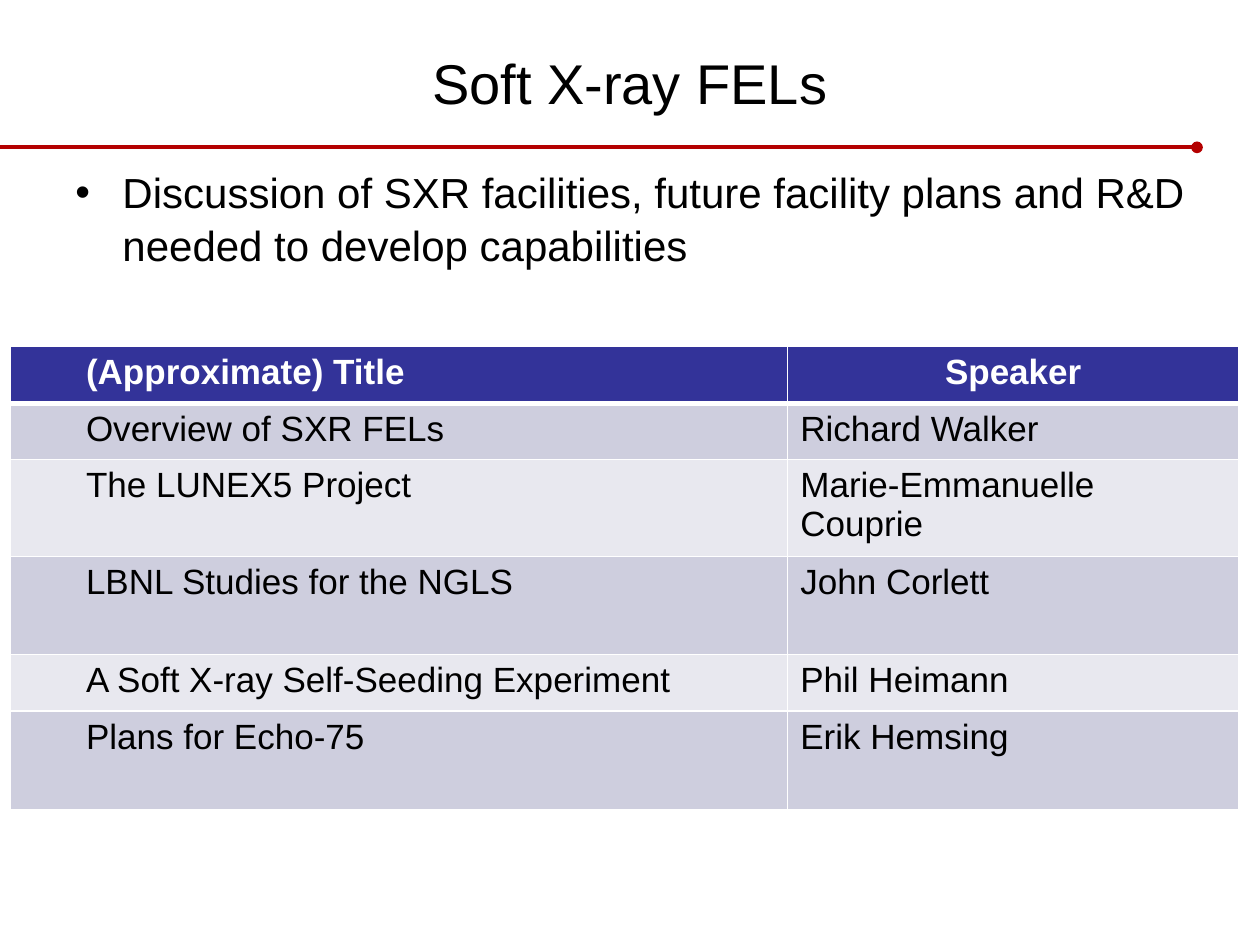
from dataclasses import dataclass

from lxml import etree
from pptx import Presentation
from pptx import util as u
from pptx.dml.color import RGBColor
from pptx.enum import shapes, text
from pptx.oxml import ns

FONT = "Arial"
BLACK, WHITE, RED = "000000", "FFFFFF", "B40000"
HEADER_FILL, BAND_FILLS = "333399", ("CECEDE", "E8E8EF")
COLUMN_WIDTHS = (15.67, 9.09)
SHORT_ROW, TALL_ROW = 1.14, 1.98


@dataclass(frozen=True)
class Talk:
    title: str
    speaker: str
    height: float = SHORT_ROW


HEADING = Talk("(Approximate) Title", "Speaker")
TALKS = (
    Talk("Overview of SXR FELs", "Richard Walker"),
    Talk("The LUNEX5 Project", "Marie-Emmanuelle Couprie"),
    Talk("LBNL Studies for the NGLS", "John Corlett", TALL_ROW),
    Talk("A Soft X-ray Self-Seeding Experiment", "Phil Heimann"),
    Talk("Plans for Echo-75", "Erik Hemsing", TALL_ROW),
)


def color(value: str) -> RGBColor:
    return RGBColor.from_string(value)


def add_element(parent, tag: str, **attributes: str):
    return etree.SubElement(parent, ns.qn(tag), attributes)


def add_run(paragraph, content: str, size: float, fill: str = BLACK, bold: bool = False) -> None:
    run = paragraph.add_run()
    run.text = content
    run.font.name = FONT
    run.font.size = u.Pt(size)
    run.font.bold = bold
    run.font.color.rgb = color(fill)


def add_text_frame(slide, top: float, height: float):
    shape = slide.shapes.add_textbox(u.Cm(1.27), u.Cm(top), u.Cm(22.86), u.Cm(height))
    shape.text_frame.word_wrap = True
    return shape.text_frame


def add_title(slide, content: str) -> None:
    frame = add_text_frame(slide, 0.76, 1.98)
    frame.vertical_anchor = text.MSO_ANCHOR.MIDDLE
    frame.margin_bottom = u.Cm(0.3)
    paragraph = frame.paragraphs[0]
    paragraph.alignment = text.PP_ALIGN.CENTER
    add_run(paragraph, content, 32)


def add_rule(slide) -> None:
    height = u.Cm(2.97)
    rule = slide.shapes.add_connector(
        shapes.MSO_CONNECTOR.STRAIGHT, 0, height, u.Cm(24.13), height
    )
    rule.line.color.rgb = color(RED)
    rule.line.width = u.Pt(2.25)
    add_element(rule.line._get_or_add_ln(), "a:tailEnd", type="oval")
    add_element(rule._element.spPr, "a:effectLst")


def add_bullet(slide, content: str) -> None:
    paragraph = add_text_frame(slide, 3.18, 13.84).paragraphs[0]
    properties = paragraph._p.get_or_add_pPr()
    indent = u.Cm(0.95)
    properties.set("marL", str(indent))
    properties.set("indent", str(-indent))
    add_element(properties, "a:buFont", typeface=FONT)
    add_element(properties, "a:buChar", char="•")
    paragraph.line_spacing = 1.05
    add_run(paragraph, content, 24)


def style_cell(cell, fill: str, top: float, bottom: float) -> None:
    properties = cell._tc.get_or_add_tcPr()
    for side, width in (("L", 1), ("R", 1), ("T", top), ("B", bottom)):
        line = add_element(properties, f"a:ln{side}", w=str(u.Pt(width)))
        add_element(add_element(line, "a:solidFill"), "a:srgbClr", val=WHITE)
    cell.fill.solid()
    cell.fill.fore_color.rgb = color(fill)


def add_schedule(slide) -> None:
    rows = (HEADING, *TALKS)
    table = slide.shapes.add_table(
        len(rows), len(COLUMN_WIDTHS), u.Cm(0.21), u.Cm(6.99),
        u.Cm(sum(COLUMN_WIDTHS)), u.Cm(sum(row.height for row in rows)),
    ).table
    for column, width in zip(table.columns, COLUMN_WIDTHS):
        column.width = u.Cm(width)
    for index, row in enumerate(rows):
        table.rows[index].height = u.Cm(row.height)
        heading = index == 0
        fill = HEADER_FILL if heading else BAND_FILLS[(index - 1) % 2]
        for position, content in enumerate((row.title, row.speaker)):
            cell = table.cell(index, position)
            style_cell(cell, fill, 3 if index == 1 else 1, 3 if heading else 1)
            paragraph = cell.text_frame.paragraphs[0]
            if position == 0:
                paragraph.level = 1
                paragraph._p.get_or_add_pPr().set("marL", str(u.Cm(1.27)))
            elif heading:
                paragraph.alignment = text.PP_ALIGN.CENTER
            add_run(paragraph, content, 20, WHITE if heading else BLACK, heading)


def main() -> None:
    """Build the session slide on soft X-ray FELs and save it."""
    presentation = Presentation()
    presentation.slide_width, presentation.slide_height = u.Cm(25.4), u.Cm(19.05)
    slide = presentation.slides.add_slide(presentation.slide_layouts[6])
    add_rule(slide)
    add_title(slide, "Soft X-ray FELs")
    add_bullet(
        slide,
        "Discussion of SXR facilities, future facility plans and "
        "R&D needed to develop capabilities",
    )
    add_schedule(slide)
    presentation.save("out.pptx")


if __name__ == "__main__":
    main()
